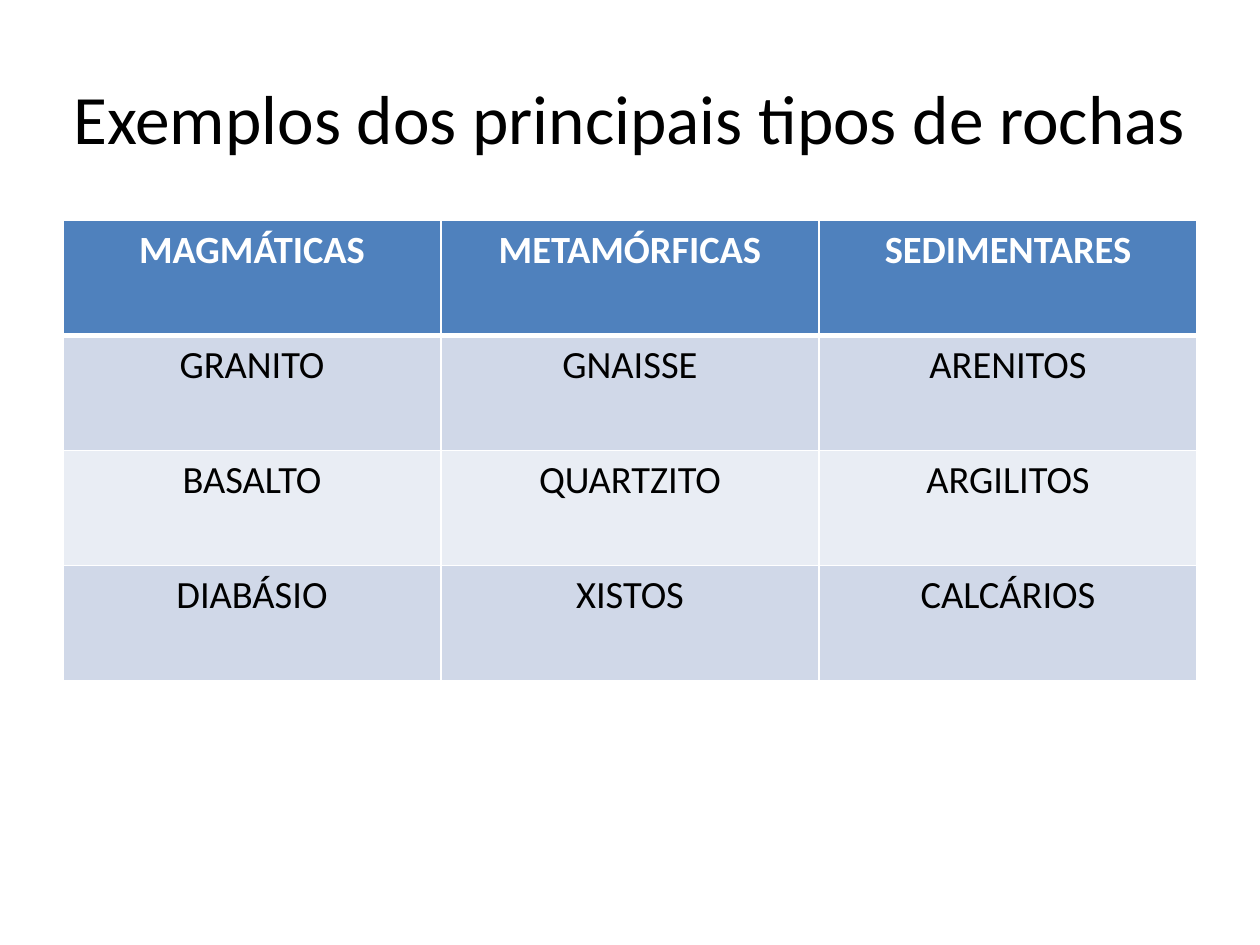
import pptx
import pptx.util
import pptx.dml.color
import pptx.enum.text
from lxml import etree

Pt = pptx.util.Pt
Align = pptx.enum.text.PP_ALIGN
Anchor = pptx.enum.text.MSO_ANCHOR

# Content
TITLE = "Exemplos dos principais tipos de rochas"
ROCKS = [
    ("MAGMÁTICAS", "METAMÓRFICAS", "SEDIMENTARES"),
    ("GRANITO", "GNAISSE", "ARENITOS"),
    ("BASALTO", "QUARTZITO", "ARGILITOS"),
    ("DIABÁSIO", "XISTOS", "CALCÁRIOS"),
]

# Style
FONT = "Calibri"
HEAD, BANDS = "4F81BD", ("E9EDF4", "D0D8E8")
WHITE, BLACK = "FFFFFF", "000000"
COL, ROW = 216, 65.7


def paint(target, color):
    target.rgb = pptx.dml.color.RGBColor.from_string(color)


def write(frame, text, size, color, bold=False):
    par = frame.paragraphs[0]
    par.alignment = Align.CENTER
    run = par.add_run()
    run.text = text
    run.font.name, run.font.size, run.font.bold = FONT, Pt(size), bold
    paint(run.font.color, color)


def edge(cell, side, width):
    props = cell._tc.get_or_add_tcPr()
    space = "http://schemas.openxmlformats.org/drawingml/2006/main"
    line = etree.Element(f"{{{space}}}ln{side}", w=str(Pt(width)))
    fill = etree.SubElement(line, f"{{{space}}}solidFill")
    etree.SubElement(fill, f"{{{space}}}srgbClr", val=WHITE)
    props.append(line)


deck = pptx.Presentation()
deck.slide_width, deck.slide_height = Pt(720), Pt(540)
slide = deck.slides.add_slide(deck.slide_layouts[5])

# Title
title = slide.shapes.title
title.left, title.top, title.width, title.height = map(Pt, (31, 21.6, 657.4, 90))
title.text_frame.vertical_anchor = Anchor.MIDDLE
write(title.text_frame, TITLE, 39.6, BLACK)

# Table of rocks
rows, cols = len(ROCKS), len(ROCKS[0])
table = slide.shapes.add_table(
    rows, cols, Pt(36), Pt(126), Pt(cols * COL), Pt(rows * ROW)).table
for col in table.columns:
    col.width = Pt(COL)
for row in table.rows:
    row.height = Pt(ROW)

for r, names in enumerate(ROCKS):
    for c, name in enumerate(names):
        cell = table.cell(r, c)
        head = r == 0
        write(cell.text_frame, name, 22, WHITE if head else BLACK, head)
        # Borders come before the fill in the cell's XML
        for side in "LRTB":
            thick = (head and side == "B") or (r == 1 and side == "T")
            edge(cell, side, 3 if thick else 1)
        cell.fill.solid()
        paint(cell.fill.fore_color, HEAD if head else BANDS[r % 2])

deck.save("out.pptx")
